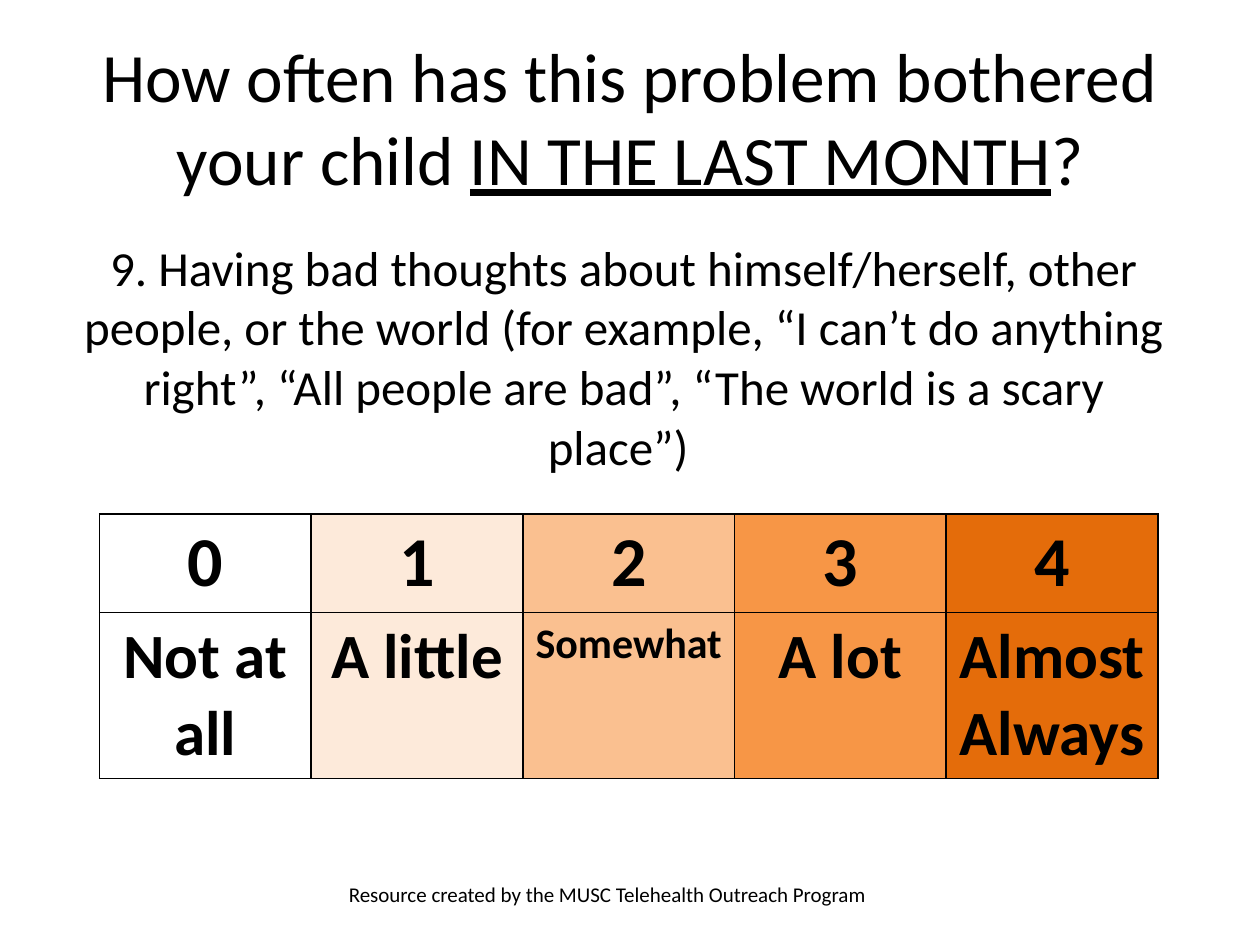
import pptx
import pptx.dml.color
import pptx.enum.text
import pptx.oxml.ns
import pptx.util
from lxml import etree
from pptx.util import Inches

COLORS = {
    "text": "000000",
    "border": "000000",
    "scale": ["FFFFFF", "FDEADA", "FAC090", "F79646", "E46C0A"],
}
FONT = "Calibri"
CENTER = pptx.enum.text.PP_ALIGN.CENTER
QUESTION = (
    "9. Having bad thoughts about himself/herself, other people, or the world "
    "(for example, “I can’t do anything right”, “All people are bad”, "
    "“The world is a scary place”) "
)
ANSWERS = [
    ("Not at all", 36),
    ("A little", 36),
    ("Somewhat", 24),
    ("A lot", 36),
    ("Almost Always", 36),
]


def rgb(value):
    return pptx.dml.color.RGBColor.from_string(value)


def format_paragraph(paragraph, size, bold=False, alignment=CENTER):
    paragraph.alignment = alignment
    paragraph.font.name = FONT
    paragraph.font.size = pptx.util.Pt(size)
    paragraph.font.bold = bold
    paragraph.font.color.rgb = rgb(COLORS["text"])


def set_title(slide):
    title = slide.shapes.title
    title.left, title.top = Inches(0.5), Inches(0.3)
    title.width, title.height = Inches(9), Inches(1.25)
    frame = title.text_frame
    frame.word_wrap = True
    frame.auto_size = pptx.enum.text.MSO_AUTO_SIZE.NONE
    frame.vertical_anchor = pptx.enum.text.MSO_ANCHOR.MIDDLE
    paragraph = frame.paragraphs[0]
    for text, underline in [
        ("How often has this problem bothered your child ", False),
        ("IN THE LAST MONTH", True),
        ("?", False),
    ]:
        run = paragraph.add_run()
        run.text = text
        run.font.underline = underline
    format_paragraph(paragraph, 39.6)


def add_plain_table(slide, left, top, column_widths, row_heights):
    table = slide.shapes.add_table(
        len(row_heights), len(column_widths), Inches(left), Inches(top),
        Inches(sum(column_widths)), Inches(sum(row_heights)),
    ).table
    table.first_row = False
    table.horz_banding = False
    for column, width in zip(table.columns, column_widths):
        column.width = Inches(width)
    for row, height in zip(table.rows, row_heights):
        row.height = Inches(height)
    return table


def set_borders(cell, color, width):
    properties = cell._tc.get_or_add_tcPr()
    for index, side in enumerate(["lnL", "lnR", "lnT", "lnB"]):
        line = etree.Element(pptx.oxml.ns.qn("a:" + side), w=str(pptx.util.Pt(width)))
        fill = etree.SubElement(line, pptx.oxml.ns.qn("a:solidFill"))
        etree.SubElement(fill, pptx.oxml.ns.qn("a:srgbClr"), val=color)
        properties.insert(index, line)


def fill_cell(cell, text, size, bold=False, color=None):
    cell.text = text
    format_paragraph(cell.text_frame.paragraphs[0], size, bold)
    if color:
        cell.fill.solid()
        cell.fill.fore_color.rgb = rgb(color)
    else:
        cell.fill.background()


def add_scale(slide):
    table = add_plain_table(slide, 0.79, 4.08, [1.68] * len(ANSWERS), [0.78, 1.32])
    for index, (answer, size) in enumerate(ANSWERS):
        color = COLORS["scale"][index]
        for row, (text, text_size) in enumerate([(str(index), 40), (answer, size)]):
            cell = table.cell(row, index)
            fill_cell(cell, text, text_size, True, color)
            set_borders(cell, COLORS["border"], 1)


def add_question(slide):
    cell = add_plain_table(slide, 0.51, 1.9, [8.88], [1.87]).cell(0, 0)
    fill_cell(cell, QUESTION, 28)
    cell.margin_left = cell.margin_right = Inches(0.05)
    cell.margin_top = cell.margin_bottom = 0


def add_credit(slide):
    box = slide.shapes.add_textbox(Inches(2.67), Inches(6.95), Inches(4.5), Inches(0.4))
    box.text_frame.word_wrap = True
    paragraph = box.text_frame.paragraphs[0]
    paragraph.text = "Resource created by the MUSC Telehealth Outreach Program"
    format_paragraph(paragraph, 12, alignment=pptx.enum.text.PP_ALIGN.LEFT)


def main():
    presentation = pptx.Presentation()
    presentation.slide_width = Inches(10)
    presentation.slide_height = Inches(7.5)
    slide = presentation.slides.add_slide(presentation.slide_layouts[5])
    set_title(slide)
    add_credit(slide)
    add_scale(slide)
    add_question(slide)
    presentation.save("out.pptx")


if __name__ == "__main__":
    main()
